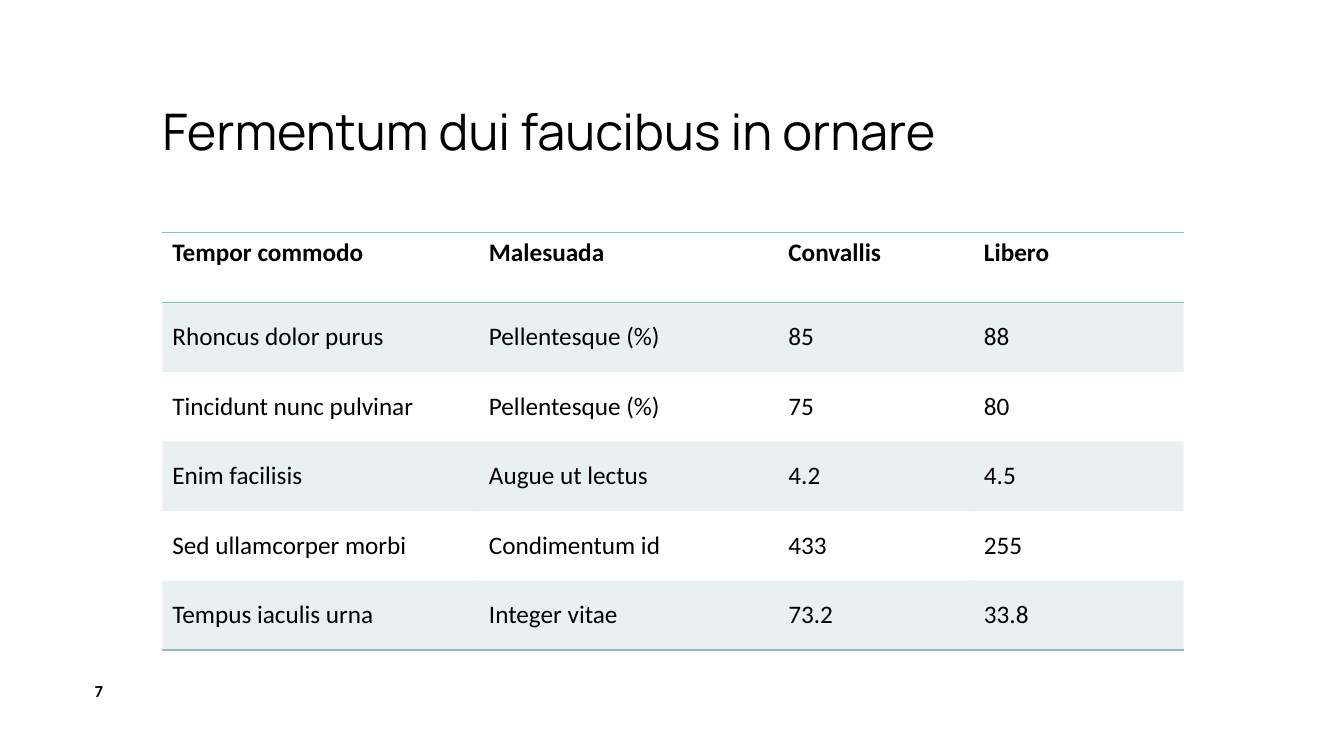
from dataclasses import dataclass

from pptx import Presentation
from pptx.dml.color import RGBColor
from pptx.enum.text import MSO_ANCHOR, PP_ALIGN
from pptx.oxml import parse_xml
from pptx.oxml.ns import nsdecls, qn
from pptx.util import Inches, Pt

TITLE = "Fermentum dui faucibus in ornare"
PAGE_NUMBER = "7"
ROWS = [
    ("Tempor commodo", "Malesuada", "Convallis", "Libero"),
    ("Rhoncus dolor purus", "Pellentesque (%)", "85", "88"),
    ("Tincidunt nunc pulvinar", "Pellentesque (%)", "75", "80"),
    ("Enim facilisis", "Augue ut lectus", "4.2", "4.5"),
    ("Sed ullamcorper morbi", "Condimentum id", "433", "255"),
    ("Tempus iaculis urna", "Integer vitae", "73.2", "33.8"),
]
COLUMN_WIDTHS = (3.14, 2.97, 1.94, 2.08)
ROW_HEIGHT = 0.69
LEFT = 1.61
PLAIN_TABLE_STYLE = "{2D5ABB26-0587-4C30-8999-92F81FD0307C}"


@dataclass(frozen=True)
class Theme:
    ink: str = "000000"
    accent: str = "95B8BF"
    band_opacity: int = 20
    heading_font: str = "Manrope"
    body_font: str = "Calibri"
    title_size: int = 36
    table_size: int = 18
    number_size: int = 12
    rule_width: int = 1


THEME = Theme()


def write_text(frame, text, size, font=THEME.body_font, bold=False,
               align=PP_ALIGN.LEFT, anchor=MSO_ANCHOR.MIDDLE, line_spacing=None, tracking=0):
    """Write one formatted paragraph into a text frame."""
    frame.word_wrap = True
    frame.vertical_anchor = anchor
    para = frame.paragraphs[0]
    para.alignment = align
    para.line_spacing = line_spacing
    span = para.add_run()
    span.text = text
    span.font.name = font
    span.font.size = Pt(size)
    span.font.bold = bold
    span.font.color.rgb = RGBColor.from_string(THEME.ink)
    if tracking:
        span.font._element.set("spc", str(int(tracking * 100)))


def add_rule(cell, side):
    """Draw a coloured border on one side of a cell."""
    cell._tc.get_or_add_tcPr().append(parse_xml(
        f'<a:{side} {nsdecls("a")} w="{Pt(THEME.rule_width)}"><a:solidFill>'
        f'<a:srgbClr val="{THEME.accent}"/></a:solidFill></a:{side}>'))


def shade(cell):
    """Fill a cell with the translucent accent colour."""
    cell.fill.solid()
    cell.fill.fore_color.rgb = RGBColor.from_string(THEME.accent)
    colour = cell._tc.tcPr.find(qn("a:solidFill")).find(qn("a:srgbClr"))
    colour.append(parse_xml(f'<a:alpha {nsdecls("a")} val="{THEME.band_opacity * 1000}"/>'))


def add_title(page):
    """Place and format the title placeholder."""
    title = page.shapes.title
    title.left, title.top = Inches(LEFT), Inches(0.55)
    title.width, title.height = Inches(10.73), Inches(1.56)
    frame = title.text_frame
    frame.margin_left = 0
    write_text(frame, TITLE, THEME.title_size, font=THEME.heading_font, line_spacing=0.9)


def add_data_table(page):
    """Build the ruled table with alternating shaded rows."""
    table = page.shapes.add_table(
        len(ROWS), len(COLUMN_WIDTHS), Inches(LEFT), Inches(2.31),
        Inches(sum(COLUMN_WIDTHS)), Inches(ROW_HEIGHT * len(ROWS))).table
    table._tbl.tblPr.find(qn("a:tableStyleId")).text = PLAIN_TABLE_STYLE
    for column, width in zip(table.columns, COLUMN_WIDTHS):
        column.width = Inches(width)
    for row_index, values in enumerate(ROWS):
        header = row_index == 0
        table.rows[row_index].height = Inches(ROW_HEIGHT)
        for column_index, value in enumerate(values):
            cell = table.cell(row_index, column_index)
            anchor = MSO_ANCHOR.TOP if header else MSO_ANCHOR.MIDDLE
            write_text(cell.text_frame, value, THEME.table_size, bold=header)
            cell.vertical_anchor = anchor
            if header:
                add_rule(cell, "lnT")
            if header or row_index == len(ROWS) - 1:
                add_rule(cell, "lnB")
            if row_index % 2:
                shade(cell)
            else:
                cell.fill.background()


def add_page_number(page):
    """Add the page number at the lower left."""
    box = page.shapes.add_textbox(Inches(0.45), Inches(6.5), Inches(1.06), Inches(0.71))
    write_text(box.text_frame, PAGE_NUMBER, THEME.number_size, bold=True,
               align=PP_ALIGN.CENTER, tracking=1.5)


def main():
    """Build and save the slide."""
    deck = Presentation()
    deck.slide_width, deck.slide_height = Inches(13.33), Inches(7.5)
    page = deck.slides.add_slide(deck.slide_layouts[5])
    add_title(page)
    add_data_table(page)
    add_page_number(page)
    deck.save("out.pptx")


if __name__ == "__main__":
    main()
